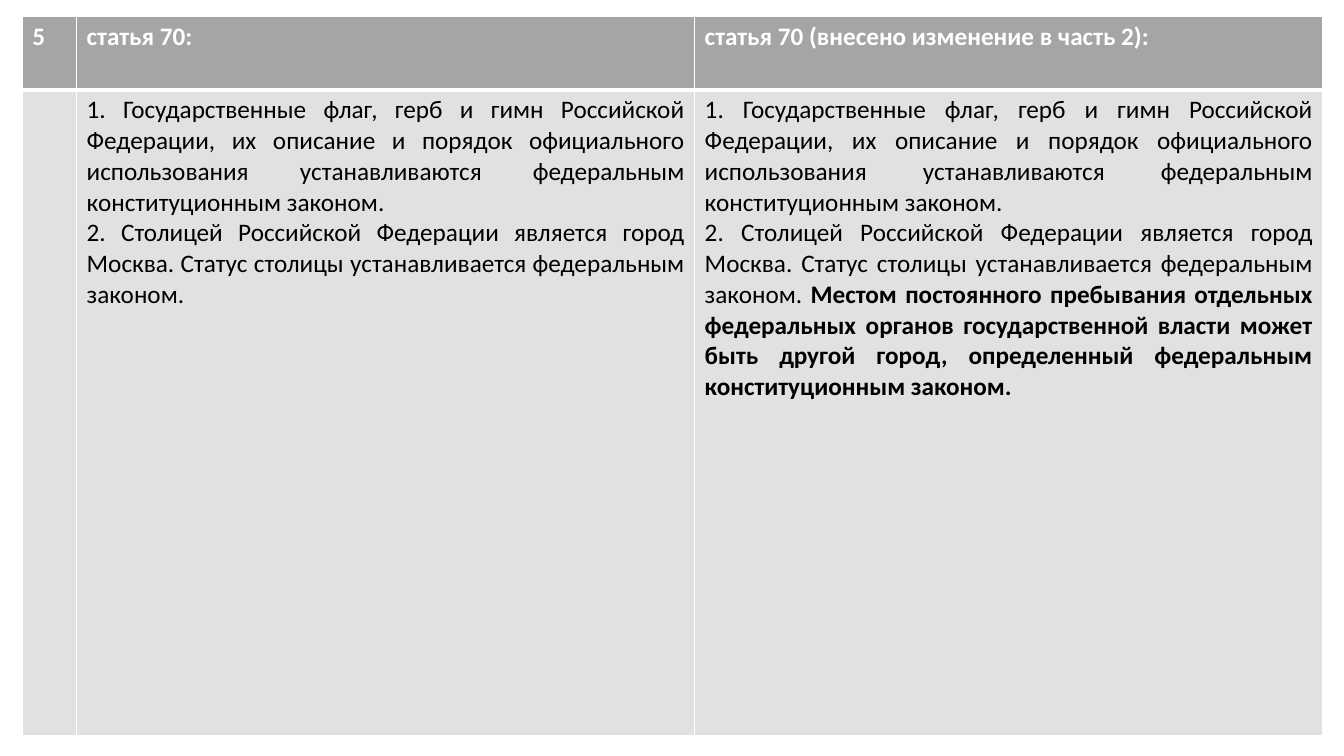
from lxml import etree
from pptx import Presentation
from pptx import util as u
from pptx.dml.color import RGBColor
from pptx.enum import text
from pptx.oxml.ns import qn

PX = 9144
COLORS = {"header": "A5A5A5", "body": "E1E1E1", "white": "FFFFFF", "black": "000000"}
COLUMNS = [54, 613, 623]
ROWS = [73, 641]

flag = "1. Государственные флаг, герб и гимн Российской Федерации, их описание и порядок официального использования устанавливаются федеральным конституционным законом. "
capital = "2. Столицей Российской Федерации является город Москва. Статус столицы устанавливается федеральным законом. "
amendment = "Местом постоянного пребывания отдельных федеральных органов государственной власти может быть другой город, определенный федеральным конституционным законом. "

CONTENT = [
    [[[("5", True)]], [[("статья 70:", True)]], [[("статья 70 (внесено изменение в часть 2):", True)]]],
    [[], [[(flag, False)], [(capital, False)]], [[(flag, False)], [(capital, False), (amendment, True)]]],
]
STYLES = [
    {"fill": "header", "font": "white", "align": text.PP_ALIGN.LEFT, "borders": {"L": 1, "R": 1, "T": 1, "B": 3}},
    {"fill": "body", "font": "black", "align": text.PP_ALIGN.JUSTIFY, "borders": {"L": 1, "R": 1, "T": 3, "B": 1}},
]


def add_border(cell, side, points):
    line = etree.SubElement(cell._tc.get_or_add_tcPr(), qn(f"a:ln{side}"), w=str(u.Pt(points)))
    fill = etree.SubElement(line, qn("a:solidFill"))
    etree.SubElement(fill, qn("a:srgbClr"), val=COLORS["white"])


deck = Presentation()
deck.slide_width = 1333 * PX
deck.slide_height = 750 * PX
page = deck.slides.add_slide(deck.slide_layouts[6])

frame = page.shapes.add_table(
    len(ROWS), len(COLUMNS), 22 * PX, 16 * PX, sum(COLUMNS) * PX, sum(ROWS) * PX
)
table = frame.table
table.horz_banding = False
for column, width in zip(table.columns, COLUMNS):
    column.width = width * PX
for row, height in zip(table.rows, ROWS):
    row.height = height * PX

for row, contents, style in zip(table.rows, CONTENT, STYLES):
    for cell, paragraphs in zip(row.cells, contents):
        for side, points in style["borders"].items():
            add_border(cell, side, points)
        cell.fill.solid()
        cell.fill.fore_color.rgb = RGBColor.from_string(COLORS[style["fill"]])
        for index, spans in enumerate(paragraphs):
            para = cell.text_frame.add_paragraph() if index else cell.text_frame.paragraphs[0]
            para.alignment = style["align"]
            for words, bold in spans:
                span = para.add_run()
                span.text = words
                span.font.name = "Calibri"
                span.font.size = u.Pt(18)
                span.font.bold = bold
                span.font.color.rgb = RGBColor.from_string(COLORS[style["font"]])

deck.save("out.pptx")
